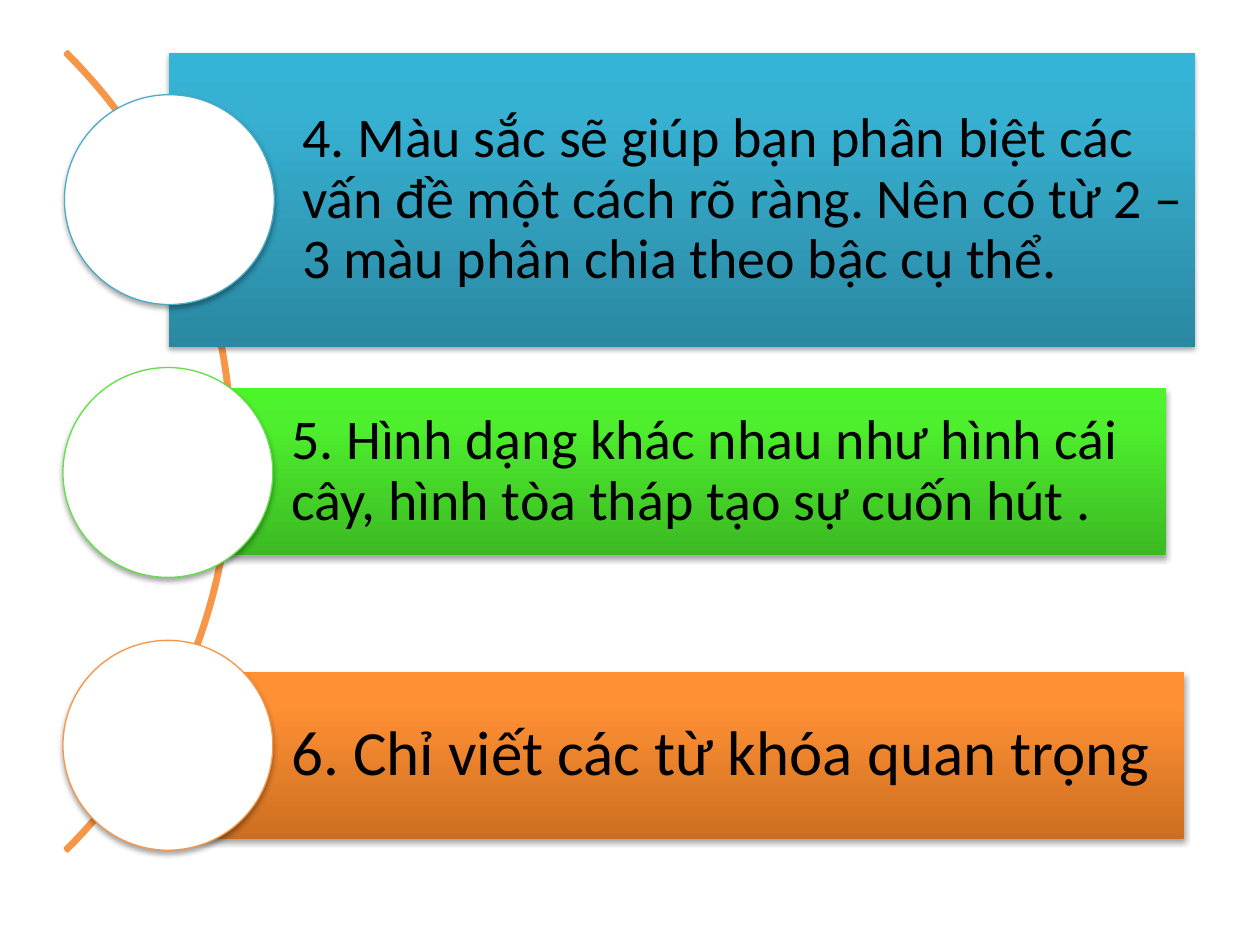
"""Build a slide with three numbered tips hung on a curved line."""
from copy import deepcopy
from pptx import Presentation
from pptx import util as u
from pptx.dml import color
from pptx.enum import shapes, text
from pptx.oxml import parse_xml
from pptx.oxml.ns import nsdecls, qn

COLORS = {"white": "FFFFFF", "black": "000000", "blue": "4BACC6",
          "green": "60E146", "orange": "F79646"}
GRADIENTS = {"blue": ("2A88A2", "37B1D2", "34B4D6"),
             "green": ("3CB923", "4EF02E", "4CF52A"),
             "orange": ("CC6E20", "FF9034", "FF9136")}
SHADOW = (f'<a:effectLst {nsdecls("a")}><a:outerShdw blurRad="40000" dist="23000" '
          'dir="5400000" rotWithShape="0"><a:srgbClr val="000000">'
          '<a:alpha val="35000"/></a:srgbClr></a:outerShdw></a:effectLst>')
FRAME = {"word_wrap": True, "vertical_anchor": text.MSO_ANCHOR.MIDDLE,
         "margin_left": u.Cm(2.69), "margin_right": u.Cm(0.23),
         "margin_top": u.Cm(0.23), "margin_bottom": u.Cm(0.23)}
PARAGRAPH = {"alignment": text.PP_ALIGN.LEFT, "line_spacing": 0.9}
TIPS = [
    ("blue", (3.4, 1.07, 20.7, 5.92), 1.3, 32,
     "4. Màu sắc sẽ giúp bạn phân biệt các vấn đề một cách rõ ràng. "
     "Nên có từ 2 – 3 màu phân chia theo bậc cụ thể."),
    ("green", (3.18, 7.82, 20.32, 3.38), 1.27, 32,
     "5. Hình dạng khác nhau như hình cái cây, hình tòa tháp tạo sự cuốn hút ."),
    ("orange", (3.18, 13.54, 20.7, 3.38), 1.27, 36,
     "6. Chỉ viết các từ khóa quan trọng"),
]
CIRCLE_TOP, CIRCLE_PITCH, CIRCLE_SIZE = 1.91, 5.5, 4.23


def rgb(name):
    return color.RGBColor.from_string(COLORS.get(name, name))


def add_shape(s, kind, box, shadow=True):
    sp = s.shapes.add_shape(kind, *map(u.Cm, box))
    sp.shadow.inherit = False
    if shadow:
        spPr = sp._element.spPr
        spPr.replace(spPr.find(qn("a:effectLst")), parse_xml(SHADOW))
    return sp


prs = Presentation()
prs.slide_width, prs.slide_height = u.Cm(25.4), u.Cm(19.05)
s = prs.slides.add_slide(prs.slide_layouts[6])

arc = add_shape(s, shapes.MSO_SHAPE.BLOCK_ARC, (-18.08, -2.29, 22.78, 22.78), False)
for i, value in enumerate((189, 27, 0.003)):
    arc.adjustments[i] = value
arc.fill.background()
arc.line.color.rgb = rgb("orange")
arc.line.width = u.Pt(2)

for i, (name, box, circle_left, size, words) in enumerate(TIPS):
    bar = add_shape(s, shapes.MSO_SHAPE.RECTANGLE, box)
    bar.line.fill.background()
    bar.fill.gradient()
    bar.fill.gradient_angle = 90
    stops = bar._element.spPr.find(".//" + qn("a:gsLst"))
    stops.insert(1, deepcopy(stops[0]))
    for stop, position, shade in zip(bar.fill.gradient_stops, (0, 0.8, 1), GRADIENTS[name]):
        stop.position = position
        stop.color.rgb = rgb(shade)

    tf = bar.text_frame
    p = tf.paragraphs[0]
    r = p.add_run()
    r.text = words
    r.font.color.rgb = rgb("black")
    font = {"name": "Calibri", "size": u.Pt(size)}
    for target, values in ((tf, FRAME), (p, PARAGRAPH), (r.font, font)):
        for key, value in values.items():
            setattr(target, key, value)

    circle = add_shape(s, shapes.MSO_SHAPE.OVAL,
                       (circle_left, CIRCLE_TOP + i * CIRCLE_PITCH, CIRCLE_SIZE, CIRCLE_SIZE))
    circle.fill.solid()
    circle.fill.fore_color.rgb = rgb("white")
    circle.line.color.rgb = rgb(name)
    circle.line.width = u.Pt(0.75)

prs.save("out.pptx")
